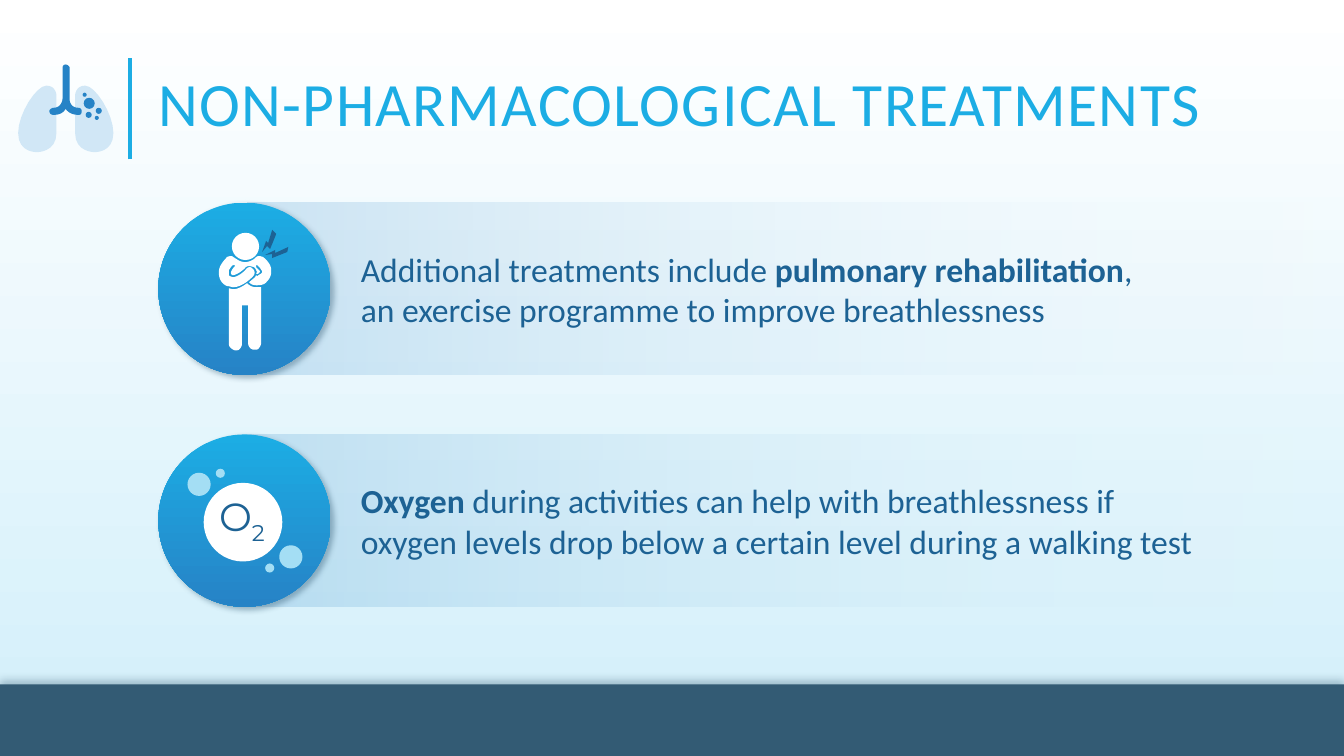
from lxml import etree
from pptx import Presentation
from pptx.dml.color import RGBColor
from pptx.enum import shapes, text
from pptx.oxml import ns
from pptx.util import Inches, Pt

# Content
TITLE = "NON-PHARMACOLOGICAL TREATMENTS"
# Each card: text width, then lines of (words, bold)
CARDS = [
    (7.87, [[("Additional treatments include ", False),
             ("pulmonary rehabilitation", True), (",", False)],
            [("an exercise programme to improve breathlessness", False)]]),
    (8.58, [[("Oxygen ", True),
             ("during activities can help with breathlessness if oxygen levels "
              "drop below a certain level during a walking test", False)]]),
]
SKY, BLUE, INK, NAVY = "1CADE4", "2683C6", "1D6294", "335B74"
WHITE, PALE, FOAM = "FFFFFF", "D1E7F6", "A4DEF4"

# Outlines: two numbers are a corner, six are a curve
LUNG = [(.56, .95), (.56, .95, .56, .85, .46, .85), (.36, .85, .18, 1.13, .18, 1.32),
        (.18, 1.52, .37, 1.51, .37, 1.51), (.37, 1.51, .56, 1.51, .56, 1.32)]
PIPE = [(.53, 1.07), (.61, 1.07, .62, .99, .62, .98), (.62, .67),
        (.62, .66, .63, .64, .65, .64), (.67, .64, .69, .66, .69, .67), (.69, .98),
        (.69, .99, .69, 1.07, .78, 1.07), (.8, 1.07, .81, 1.09, .81, 1.1),
        (.81, 1.13, .8, 1.14, .78, 1.14), (.72, 1.14, .68, 1.12, .65, 1.08),
        (.63, 1.12, .59, 1.14, .53, 1.14), (.51, 1.14, .49, 1.13, .49, 1.1),
        (.49, 1.09, .51, 1.07, .53, 1.07)]
LEGS = [(2.59, 3.09), (2.59, 2.85), (2.54, 2.85), (2.5, 2.85, 2.47, 2.83, 2.45, 2.81),
        (2.41, 2.84, 2.36, 2.87, 2.31, 2.87), (2.27, 2.86), (2.27, 3.41),
        (2.27, 3.43, 2.28, 3.45, 2.3, 3.46), (2.32, 3.48, 2.35, 3.48, 2.37, 3.47),
        (2.39, 3.45, 2.4, 3.43, 2.4, 3.41), (2.4, 3.03), (2.46, 3.03), (2.46, 3.4),
        (2.46, 3.44, 2.49, 3.47, 2.52, 3.47), (2.54, 3.47, 2.56, 3.47, 2.57, 3.45),
        (2.58, 3.44, 2.59, 3.42, 2.59, 3.4)]
ARMS = [(2.69, 2.68), (2.69, 2.61, 2.62, 2.56, 2.61, 2.55), (2.58, 2.54), (2.57, 2.54),
        (2.55, 2.54, 2.54, 2.55, 2.53, 2.56), (2.51, 2.58, 2.47, 2.6, 2.43, 2.6),
        (2.39, 2.6, 2.36, 2.58, 2.33, 2.56), (2.3, 2.54), (2.28, 2.54), (2.25, 2.55),
        (2.25, 2.56, 2.17, 2.62, 2.17, 2.7), (2.17, 2.74, 2.18, 2.78, 2.21, 2.81),
        (2.23, 2.83, 2.25, 2.84, 2.27, 2.84), (2.31, 2.85),
        (2.41, 2.85, 2.5, 2.75, 2.51, 2.74), (2.53, 2.72, 2.53, 2.69, 2.51, 2.67),
        (2.5, 2.66, 2.49, 2.65, 2.48, 2.65), (2.46, 2.65, 2.45, 2.66, 2.44, 2.67),
        (2.42, 2.7, 2.35, 2.75, 2.31, 2.75), (2.28, 2.74), (2.27, 2.73), (2.27, 2.68),
        (2.29, 2.65), (2.31, 2.63), (2.33, 2.63), (2.33, 2.64),
        (2.31, 2.66, 2.29, 2.69, 2.29, 2.71), (2.3, 2.73), (2.31, 2.73),
        (2.34, 2.73, 2.4, 2.69, 2.43, 2.66), (2.44, 2.64, 2.46, 2.64, 2.48, 2.64),
        (2.52, 2.65), (2.54, 2.67, 2.54, 2.68, 2.55, 2.7), (2.54, 2.71), (2.55, 2.72),
        (2.57, 2.71), (2.58, 2.69), (2.54, 2.65), (2.54, 2.63), (2.55, 2.63),
        (2.56, 2.64), (2.58, 2.66), (2.6, 2.69), (2.6, 2.7, 2.6, 2.71, 2.58, 2.72),
        (2.55, 2.74), (2.54, 2.73), (2.53, 2.75), (2.47, 2.8),
        (2.49, 2.82, 2.51, 2.83, 2.54, 2.83), (2.58, 2.83, 2.62, 2.83, 2.65, 2.79),
        (2.69, 2.75, 2.69, 2.71, 2.69, 2.68)]
BOLTS = [
    [(2.6, 2.5), (2.64, 2.39), (2.66, 2.41), (2.7, 2.28), (2.74, 2.32), (2.68, 2.47),
     (2.65, 2.44)],
    [(2.63, 2.53), (2.73, 2.48), (2.73, 2.51), (2.86, 2.45), (2.85, 2.5), (2.7, 2.56),
     (2.7, 2.52)],
]
# Dots: left, top, size
SPOTS = [(.83, .97, .11), (.95, 1.07, .06), (.85, 1.11, .06), (.82, .92, .04), (.94, 1.15, .04)]
FOAMS = [(1.86, 4.69, .23), (2.77, 5.41, .23), (2.14, 4.65, .09), (2.63, 5.59, .09)]

deck = Presentation()
deck.slide_width, deck.slide_height = Inches(13.33), Inches(7.5)
slide = deck.slides.add_slide(deck.slide_layouts[6])
page = slide.shapes


def rgb(code):
    return RGBColor.from_string(code)


def node(parent, tag, **attrs):
    child = etree.SubElement(parent, ns.qn(tag))
    for key, val in attrs.items():
        child.set(key, str(val))
    return child


def blend(fill, hues, angle, alphas=()):
    fill.gradient()
    fill.gradient_angle = angle
    for stop, hue in zip(fill.gradient_stops, hues):
        stop.color.rgb = rgb(hue)
    for clr, pct in zip(fill._xPr.iter(ns.qn("a:srgbClr")), alphas):
        node(clr, "a:alpha", val=pct * 1000)


def paint(shape, hue=None):
    shape.shadow.inherit = False
    shape.line.fill.background()
    if hue:
        shape.fill.solid()
        shape.fill.fore_color.rgb = rgb(hue)
    return shape


def draw(to, kind, x, y, w, h, hue=None):
    return paint(to.add_shape(kind, *map(Inches, (x, y, w, h))), hue)


def disc(to, x, y, size, hue=None):
    return draw(to, shapes.MSO_SHAPE.OVAL, x, y, size, size, hue)


def shade(shape, blur, angle):
    glow = node(shape._element.spPr.find(ns.qn("a:effectLst")), "a:outerShdw",
                blurRad=Pt(blur), dist=Pt(3), dir=angle * 60000, algn="ctr", rotWithShape=0)
    node(node(glow, "a:srgbClr", val=NAVY), "a:alpha", val=40000)


def trace(to, outline, hue, steps=8):
    pts = [outline[0]]
    for seg in outline[1:]:
        if len(seg) == 2:
            pts.append(seg)
            continue
        knots = [pts[-1], seg[:2], seg[2:4], seg[4:]]
        for i in range(1, steps + 1):
            t = i / steps
            mix = ((1 - t) ** 3, 3 * t * (1 - t) ** 2, 3 * t * t * (1 - t), t ** 3)
            pts.append(tuple(sum(m * k[n] for m, k in zip(mix, knots)) for n in (0, 1)))
    spots = [(Inches(x), Inches(y)) for x, y in pts]
    form = to.build_freeform(*spots[0], scale=1.0)
    form.add_line_segments(spots[1:], close=True)
    paint(form.convert_to_shape(), hue)


def label(to, x, y, w, h, size, hue, face="Calibri"):
    frame = to.add_textbox(*map(Inches, (x, y, w, h))).text_frame
    frame.word_wrap = True
    frame.vertical_anchor = text.MSO_ANCHOR.MIDDLE
    para = frame.paragraphs[0]
    para.font.size, para.font.name = Pt(size), face
    para.font.color.rgb = rgb(hue)
    return frame, para


def group():
    return page.add_group_shape().shapes


# Background, title rule and lungs
blend(slide.background.fill, (WHITE, "D2EFFA"), 270)
rule = page.add_connector(shapes.MSO_CONNECTOR.STRAIGHT,
                          *map(Inches, (1.29, 1.58, 1.29, .58)))
rule.line.color.rgb, rule.line.width = rgb(SKY), Pt(2.5)
node(rule._element.spPr, "a:effectLst")
lungs = group()
trace(lungs, LUNG, PALE)
trace(lungs, [tuple(v if i % 2 else 1.305 - v for i, v in enumerate(seg)) for seg in LUNG], PALE)
trace(lungs, PIPE, BLUE)
for spot in SPOTS:
    disc(lungs, *spot, BLUE)

# Cards
for row, (wide, lines) in enumerate(CARDS):
    top = 2.01 + 2.3 * row
    card = group()
    band = draw(card, shapes.MSO_SHAPE.RECTANGLE, 2.46, top, 10.87, 1.71)
    blend(band.fill, (BLUE, WHITE), 0, (20, 0))
    badge = disc(card, 1.57, top, 1.71)
    blend(badge.fill, (SKY, BLUE), 270)
    shade(badge, 4, 45)
    _, para = label(page, 3.48, top + .4, wide, .91, 24, INK)
    for n, line in enumerate(lines):
        if n:
            para.add_line_break()
        for words, bold in line:
            run = para.add_run()
            run.text, run.font.bold = words, bold

# Footer and title
foot = draw(page, shapes.MSO_SHAPE.RECTANGLE, 0, 6.79, 13.33, .71, NAVY)
shade(foot, 6, 270)
frame, para = label(page, 1.57, .58, 10.63, 1, 44, SKY)
frame.margin_left = frame.margin_right = frame.margin_top = frame.margin_bottom = 0
para.line_spacing = .8
run = para.add_run()
run.text = TITLE
run._r.get_or_add_rPr().set("spc", "100")

# Breathless figure
figure = group()
disc(figure, 2.3, 2.31, .27, WHITE)
trace(figure, LEGS, WHITE)
trace(figure, ARMS, WHITE)
for bolt in BOLTS:
    trace(figure, bolt, INK)

# Oxygen bubbles
oxygen = group()
disc(oxygen, 2.02, 4.79, .78, WHITE)
for foam in FOAMS:
    disc(oxygen, *foam, FOAM)
_, para = label(oxygen, 1.91, 4.87, .98, .56, 28, INK, "Montserrat")
para.alignment = text.PP_ALIGN.CENTER
for mark in "O2":
    run = para.add_run()
    run.text = mark
run._r.get_or_add_rPr().set("baseline", "-25000")

deck.save("out.pptx")
